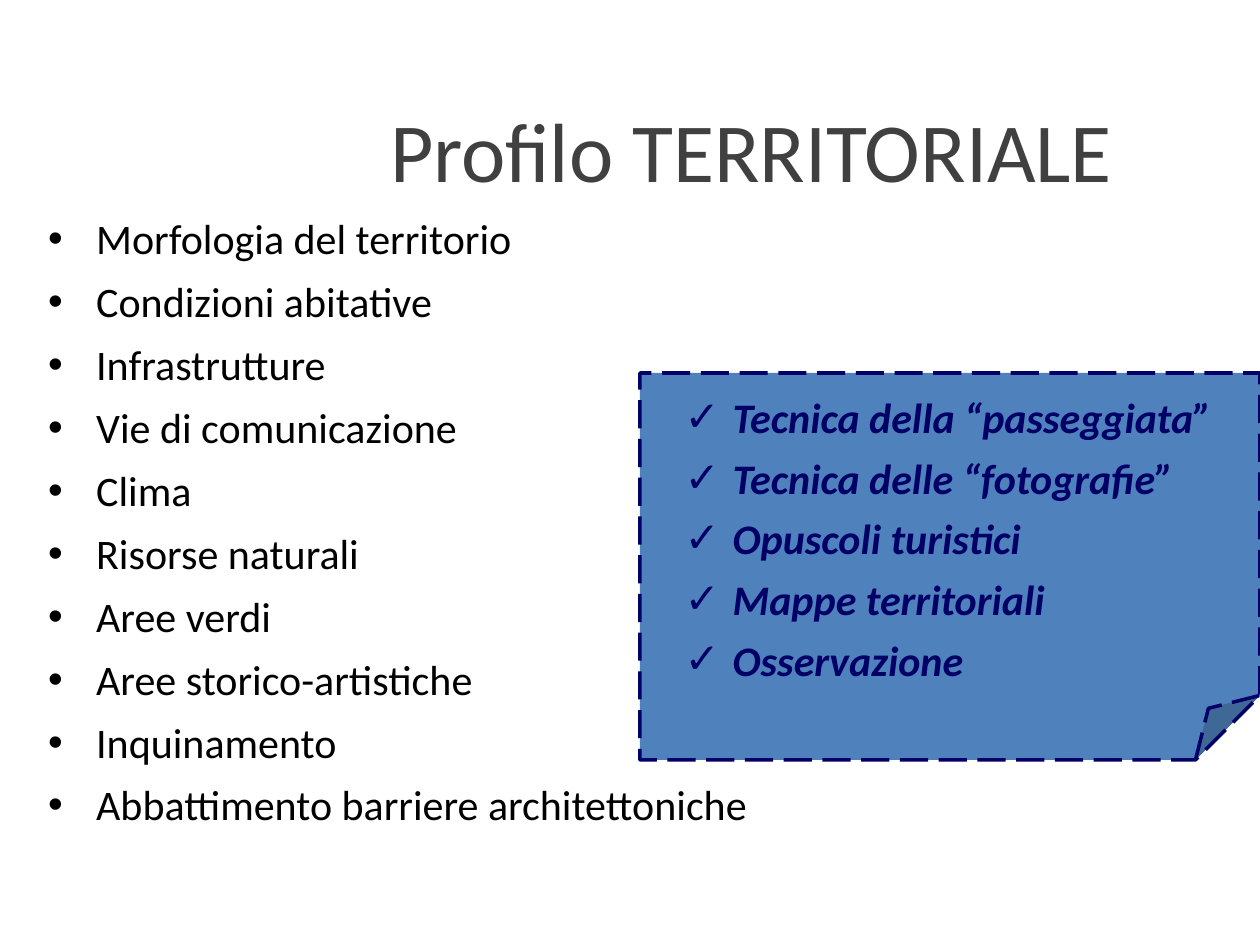
from dataclasses import dataclass

import lxml.etree
import pptx
import pptx.dml.color
import pptx.enum.dml
import pptx.enum.text
import pptx.oxml.ns
import pptx.util
from pptx.util import Cm

Point = tuple[float, float]


@dataclass(frozen=True)
class Theme:
    font: str = "Calibri"
    bullet_font: str = "Arial"
    title_size: float = 48
    body_size: float = 24
    title_color: str = "404040"
    body_color: str = "000000"
    note_color: str = "000066"
    note_fill: str = "4F81BC"
    fold_fill: str = "406897"


@dataclass(frozen=True)
class Box:
    left: float
    top: float
    width: float
    height: float

    def lengths(self) -> tuple:
        return Cm(self.left), Cm(self.top), Cm(self.width), Cm(self.height)


@dataclass(frozen=True)
class BulletList:
    box: Box
    items: tuple[str, ...]
    bullet: str
    color: str
    gap: float
    emphasis: bool = False


THEME = Theme()

TITLE_BOX = Box(0.94, 1.96, 21.69, 2.06)
NOTE_BOX = Box(12.9, 7.52, 12.5, 7.8)
FOLD_SIZE = 1.3

TOPICS = BulletList(
    Box(0.95, 4.29, 11.48, 11.23),
    (
        "Morfologia del territorio",
        "Condizioni abitative",
        "Infrastrutture",
        "Vie di comunicazione",
        "Clima",
        "Risorse naturali",
        "Aree verdi",
        "Aree storico-artistiche",
        "Inquinamento",
    ),
    "•", THEME.body_color, 7.2,
)
LAST_TOPIC = BulletList(
    Box(0.95, 15.7, 17.45, 1.02),
    ("Abbattimento barriere architettoniche",),
    "•", THEME.body_color, 7.2,
)
TECHNIQUES = BulletList(
    Box(13.78, 7.9, 10.77, 5.84),
    (
        "Tecnica della “passeggiata”",
        "Tecnica delle “fotografie”",
        "Opuscoli turistici",
        "Mappe territoriali",
        "Osservazione",
    ),
    "✓", THEME.note_color, 5.8, True,
)


def rgb(value: str) -> pptx.dml.color.RGBColor:
    return pptx.dml.color.RGBColor.from_string(value)


def add_frame(slide, box: Box):
    frame = slide.shapes.add_textbox(*box.lengths()).text_frame
    frame.word_wrap = True
    frame.auto_size = pptx.enum.text.MSO_AUTO_SIZE.SHAPE_TO_FIT_TEXT
    frame.margin_left = frame.margin_top = 0
    frame.margin_right = frame.margin_bottom = 0
    return frame


def add_run(paragraph, text: str, size: float, color: str):
    run = paragraph.add_run()
    run.text = text
    run.font.name = THEME.font
    run.font.size = pptx.util.Pt(size)
    run.font.color.rgb = rgb(color)
    return run


def set_bullet(paragraph, bullet: str, color: str) -> None:
    qn = pptx.oxml.ns.qn
    properties = paragraph._p.get_or_add_pPr()
    properties.set("marL", str(Cm(0.99)))
    properties.set("indent", str(Cm(-0.97)))
    bullet_color = lxml.etree.SubElement(properties, qn("a:buClr"))
    lxml.etree.SubElement(bullet_color, qn("a:srgbClr"), val=color)
    lxml.etree.SubElement(properties, qn("a:buFont"), typeface=THEME.bullet_font)
    lxml.etree.SubElement(properties, qn("a:buChar"), char=bullet)


def add_title(slide, text: str) -> None:
    frame = add_frame(slide, TITLE_BOX)
    frame.vertical_anchor = pptx.enum.text.MSO_ANCHOR.BOTTOM
    heading = frame.paragraphs[0]
    heading.alignment = pptx.enum.text.PP_ALIGN.CENTER
    heading._p.get_or_add_pPr().set("marL", str(Cm(6.73)))
    add_run(heading, text, THEME.title_size, THEME.title_color)


def add_bullets(slide, content: BulletList) -> None:
    frame = add_frame(slide, content.box)
    for index, item in enumerate(content.items):
        paragraph = frame.add_paragraph() if index else frame.paragraphs[0]
        paragraph.space_before = pptx.util.Pt(content.gap if index else 0)
        set_bullet(paragraph, content.bullet, content.color)
        run = add_run(paragraph, item, THEME.body_size, content.color)
        run.font.bold = run.font.italic = content.emphasis


def add_outline(slide, points: list[Point], closed: bool):
    start, *others = [(Cm(x), Cm(y)) for x, y in points]
    builder = slide.shapes.build_freeform(*start)
    builder.add_line_segments(others, close=closed)
    outline = builder.convert_to_shape()
    outline.shadow.inherit = False
    return outline


def add_area(slide, points: list[Point], color: str) -> None:
    area = add_outline(slide, points, True)
    area.fill.solid()
    area.fill.fore_color.rgb = rgb(color)
    area.line.fill.background()


def add_note(slide) -> None:
    left, top = NOTE_BOX.left, NOTE_BOX.top
    right, bottom = left + NOTE_BOX.width, top + NOTE_BOX.height
    fold_start = (right - FOLD_SIZE, bottom)
    fold_end = (right, bottom - FOLD_SIZE)
    fold_tip = (right - 0.8 * FOLD_SIZE, bottom - 0.8 * FOLD_SIZE)
    edge = [fold_start, (left, bottom), (left, top), (right, top), fold_end]

    add_area(slide, edge, THEME.note_fill)
    add_area(slide, [fold_end, fold_tip, fold_start], THEME.fold_fill)
    border = add_outline(slide, [fold_start, fold_tip, fold_end, *edge], False)
    border.fill.background()
    border.line.color.rgb = rgb(THEME.note_color)
    border.line.width = pptx.util.Pt(2)
    border.line.dash_style = pptx.enum.dml.MSO_LINE.LONG_DASH


def main() -> None:
    deck = pptx.Presentation()
    deck.slide_width, deck.slide_height = Cm(25.4), Cm(19.05)
    slide = deck.slides.add_slide(deck.slide_layouts[6])
    add_bullets(slide, TOPICS)
    add_bullets(slide, LAST_TOPIC)
    add_title(slide, "Profilo TERRITORIALE")
    add_note(slide)
    add_bullets(slide, TECHNIQUES)
    deck.save("out.pptx")


if __name__ == "__main__":
    main()
